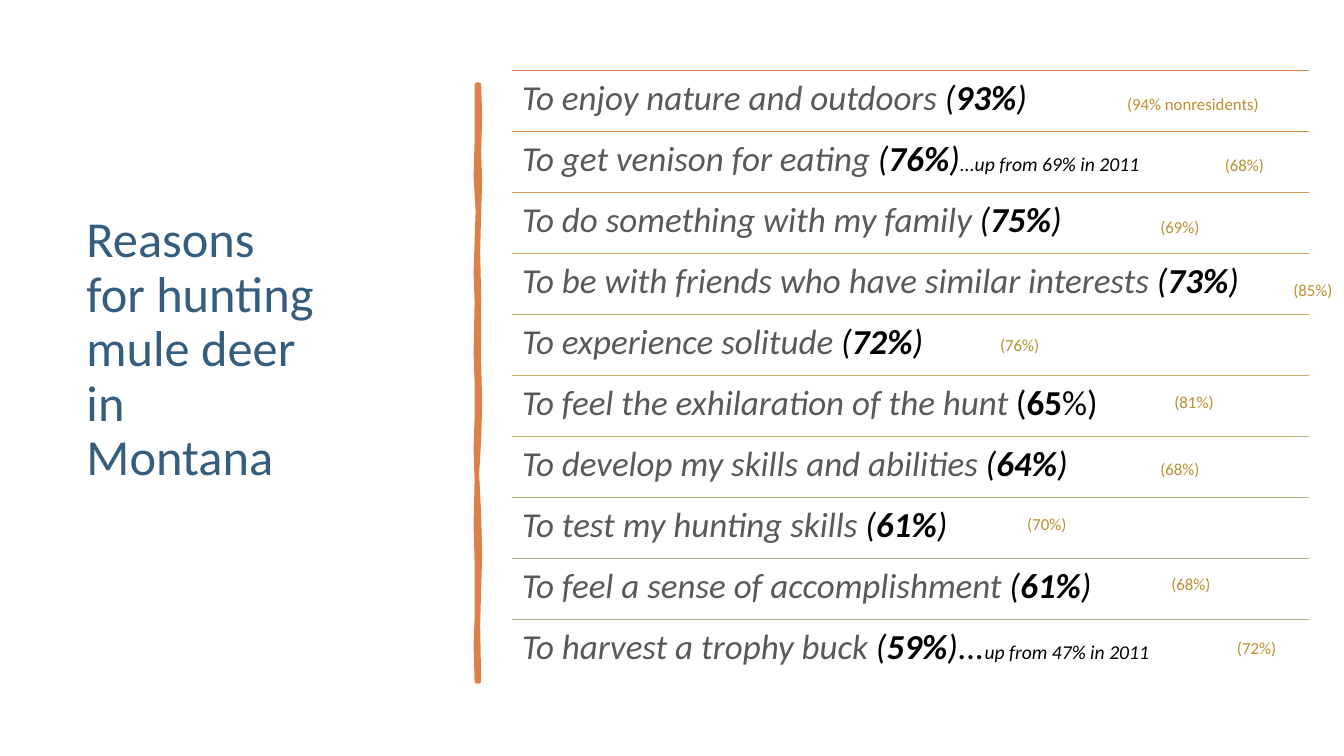
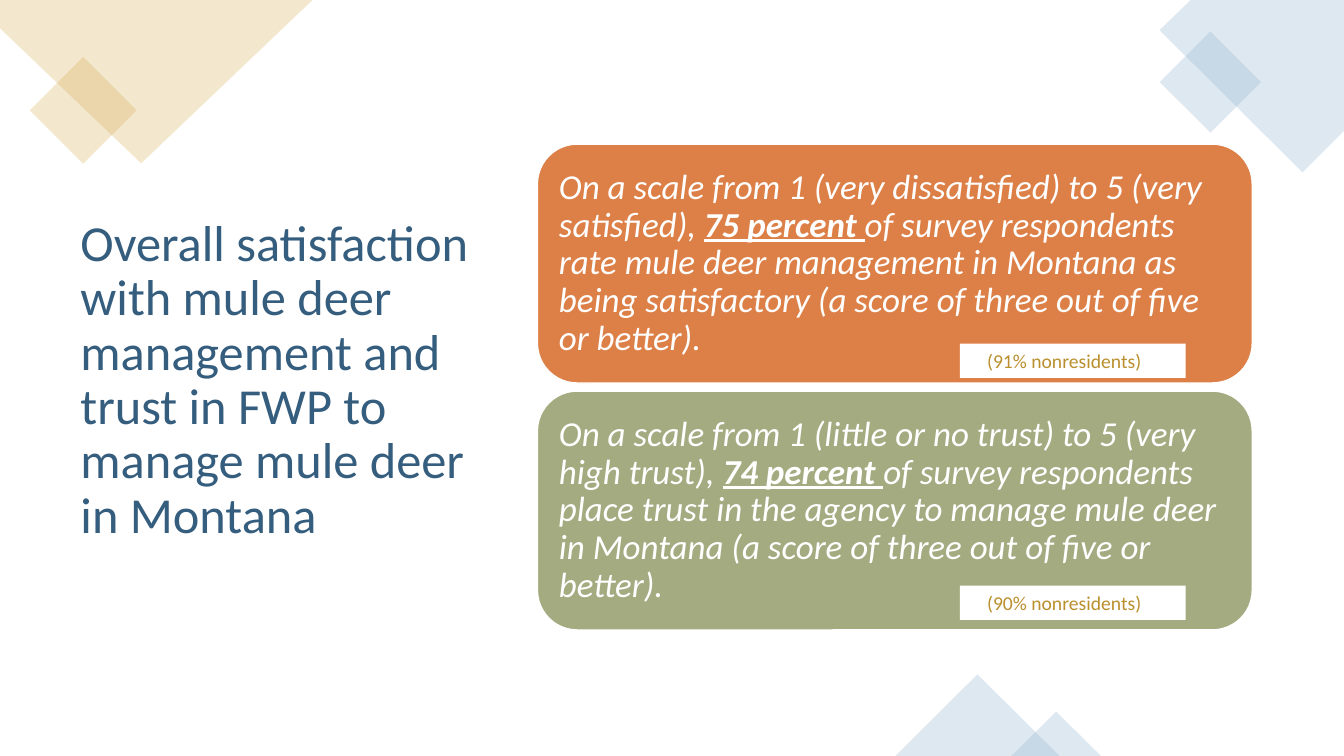
import collections

import lxml.etree
import pptx
import pptx.dml.color
import pptx.enum.shapes
import pptx.enum.text
import pptx.oxml.ns
import pptx.util

Inches = pptx.util.Inches
Pt = pptx.util.Pt
Shape = pptx.enum.shapes.MSO_SHAPE
Anchor = pptx.enum.text.MSO_ANCHOR
qn = pptx.oxml.ns.qn

NAVY, GOLD, GRAY = "355D7E", "BA8F2D", "595959"
ORANGE, GREEN, SAND, BLUE = "DD8047", "A5AB81", "D8B25C", "94B6D2"
BLACK, WHITE = "000000", "FFFFFF"

Reason = collections.namedtuple(
    "Reason",
    "text share close trend line note note_x note_y italic",
    defaults=[True],
)

REASONS = [
    Reason("To enjoy nature and outdoors ", "93%", ")", "", "DD8047",
           "(94% nonresidents)", 11.08, 0.88),
    Reason("To get venison for eating ", "76%", ")", "...up from 69% in 2011", "D78E4E",
           "(68%)", 12.05, 1.49),
    Reason("To do something with my family ", "75%", ")", "", "D29954",
           "(69%)", 11.41, 2.1),
    Reason("To be with friends who have similar interests ", "73%", ")", "", "CCA35B",
           "(85%)", 12.73, 2.73),
    Reason("To experience solitude ", "72%", ")", "", "C6AA61",
           "(76%)", 9.82, 3.27),
    Reason("To feel the exhilaration of the hunt ", "65", "%)", "", "C1AF68",
           "(81%)", 11.55, 3.84, False),
    Reason("To develop my skills and abilities ", "64%", ")", "", "BBB36E",
           "(68%)", 11.41, 4.5),
    Reason("To test my hunting skills ", "61%", ")", "", "B6B474",
           "(70%)", 10.09, 5.05),
    Reason("To feel a sense of accomplishment ", "61%", ")", "", "ADB07B",
           "(68%)", 11.52, 5.64),
    Reason("To harvest a trophy buck ", "59%", ")...", "up from 47% in 2011", "A5AB81",
           "(72%)", 12.17, 6.28),
]

BRUSH_RIGHT = [
    (4.75, 0.84), (4.76, 1.15), (4.75, 1.5), (4.76, 1.8), (4.75, 2.1), (4.74, 2.5),
    (4.75, 2.94), (4.75, 3.3), (4.75, 3.6), (4.76, 4), (4.75, 4.36), (4.73, 4.7),
    (4.75, 5.1), (4.76, 5.5), (4.75, 5.84), (4.74, 6.2), (4.75, 6.76),
]
BRUSH_LEFT = [
    (4.73, 6.76), (4.72, 6.4), (4.73, 6.13), (4.73, 5.8), (4.73, 5.57), (4.72, 5.2),
    (4.73, 4.77), (4.72, 4.45), (4.73, 4.15), (4.73, 3.8), (4.72, 3.5), (4.73, 3),
    (4.72, 2.7), (4.73, 2.4), (4.74, 2.1), (4.72, 1.75), (4.73, 1.4), (4.73, 0.84),
]

SCORES = [
    (1.43, 3.41, ORANGE,
     "On a scale from 1 (very dissatisfied) to 5 (very satisfied), ", "75 percent ",
     "of survey respondents rate mule deer management in Montana as being satisfactory "
     "(a score of three out of five or better).", "(91% nonresidents)"),
    (3.88, 5.81, GREEN,
     "On a scale from 1 (little or no trust) to 5 (very high trust), ", "74 percent ",
     "of survey respondents place trust in the agency to manage mule deer in Montana "
     "(a score of three out of five or better).", "(90% nonresidents)"),
]


def rgb(value):
    return pptx.dml.color.RGBColor.from_string(value)


class Deck:
    font = "Calibri"
    title_size, body_size, trend_size, note_size = 36, 25, 14, 12

    def __init__(self):
        self.prs = pptx.Presentation()
        self.prs.slide_width = Inches(13.33)
        self.prs.slide_height = Inches(7.5)
        self.s = None

    def new_slide(self):
        self.s = self.prs.slides.add_slide(self.prs.slide_layouts[6])

    def add_runs(self, sp, runs, anchor=Anchor.TOP, spacing=0.9):
        tf = sp.text_frame
        tf.word_wrap = True
        tf.vertical_anchor = anchor
        p = tf.paragraphs[0]
        p.alignment = pptx.enum.text.PP_ALIGN.LEFT
        p.line_spacing = spacing
        for text, size, color, marks in runs:
            r = p.add_run()
            r.text = text
            r.font.name = self.font
            r.font.size = Pt(size)
            r.font.color.rgb = rgb(color)
            r.font.bold = "b" in marks
            r.font.italic = "i" in marks
            r.font.underline = "u" in marks

    def text(self, x, y, w, h, runs, **options):
        sp = self.s.shapes.add_textbox(Inches(x), Inches(y), Inches(w), Inches(h))
        self.add_runs(sp, runs, **options)

    def title(self, x, y, w, h, text):
        self.text(x, y, w, h, [(text, self.title_size, NAVY, "")], anchor=Anchor.MIDDLE)

    def note(self, x, y, text):
        w = 0.6 if len(text) < 8 else 1.6
        self.text(x, y, w, 0.3, [(text, self.note_size, GOLD, "")], spacing=1)

    def paint(self, sp, fill, line=None, width=1, opacity=100):
        sp.shadow.inherit = False
        sp.fill.solid()
        sp.fill.fore_color.rgb = rgb(fill)
        if opacity < 100:
            color = sp.element.spPr.find(qn("a:solidFill")).find(qn("a:srgbClr"))
            lxml.etree.SubElement(color, qn("a:alpha")).set("val", str(opacity * 1000))
        if line:
            sp.line.color.rgb = rgb(line)
            sp.line.width = Pt(width)
        else:
            sp.line.fill.background()

    def shape(self, kind, x, y, w, h, fill, rotation=0, **paint):
        sp = self.s.shapes.add_shape(kind, Inches(x), Inches(y), Inches(w), Inches(h))
        sp.rotation = rotation
        self.paint(sp, fill, **paint)
        return sp

    def outline(self, points, fill, **paint):
        start, *rest = [(Inches(x), Inches(y)) for x, y in points]
        builder = self.s.shapes.build_freeform(*start)
        builder.add_line_segments(rest, close=True)
        self.paint(builder.convert_to_shape(), fill, **paint)

    def rule(self, x1, x2, y, color):
        line = self.s.shapes.add_connector(
            pptx.enum.shapes.MSO_CONNECTOR.STRAIGHT,
            Inches(x1), Inches(y), Inches(x2), Inches(y))
        line.line.color.rgb = rgb(color)
        line.line.width = Pt(1)
        lxml.etree.SubElement(line.element.spPr, qn("a:effectLst"))

    def badge(self, x, y, w, h, text):
        sp = self.shape(Shape.RECTANGLE, x, y, w, h, WHITE)
        sp.text_frame.margin_left = Inches(0.27)
        self.add_runs(sp, [(text, self.trend_size, GOLD, "")], spacing=1)


def reasons_slide(deck):
    deck.new_slide()
    deck.title(0.76, 0.42, 2.5, 6.11, "Reasons for hunting mule deer in Montana")
    deck.outline(BRUSH_RIGHT + BRUSH_LEFT, ORANGE, line=ORANGE, width=3.25)
    left, top, width, pitch = 5.08, 0.7, 7.9, 0.605
    for i, reason in enumerate(REASONS):
        y = top + i * pitch
        marks = "i" if reason.italic else ""
        runs = [
            (reason.text, deck.body_size, GRAY, "i"),
            ("(", deck.body_size, BLACK, marks),
            (reason.share, deck.body_size, BLACK, marks + "b"),
            (reason.close, deck.body_size, BLACK, marks),
        ]
        if reason.trend:
            runs.append((reason.trend, deck.trend_size, BLACK, marks))
        deck.rule(left, left + width, y, reason.line)
        deck.text(left, y + 0.05, width, pitch, runs)
        deck.note(reason.note_x, reason.note_y, reason.note)


def satisfaction_slide(deck):
    deck.new_slide()
    deck.title(0.7, 1.31, 4.33, 4.94,
               "Overall satisfaction with mule deer management and trust in FWP "
               "to manage mule deer in Montana")
    deck.shape(Shape.RECTANGLE, 0.45, 0.72, 0.75, 0.75, SAND, rotation=45, opacity=30)
    deck.outline([(0, 0), (3.1, 0), (1.4, 1.62), (0, 0.28)], SAND, opacity=30)
    deck.outline([(11.81, 0), (13.33, 0), (13.33, 1.3), (12.92, 1.71), (11.5, 0.3)],
                 BLUE, opacity=30)
    deck.shape(Shape.RECTANGLE, 11.65, 0.46, 0.71, 0.71, BLUE, rotation=45, opacity=30)
    for x, y, w, h in [(8.88, 6.69, 1.63, 0.81), (10.03, 7.06, 0.89, 0.44)]:
        deck.shape(Shape.ISOSCELES_TRIANGLE, x, y, w, h, BLUE, opacity=30)
    for y, badge_y, fill, scale, share, finding, nonresidents in SCORES:
        card = deck.shape(Shape.ROUNDED_RECTANGLE, 5.33, y, 7.09, 2.37, fill, line=WHITE)
        deck.add_runs(card, [
            (scale, deck.body_size, WHITE, "i"),
            (share, deck.body_size, WHITE, "ibu"),
            (finding, deck.body_size, WHITE, "i"),
        ], anchor=Anchor.MIDDLE)
        deck.badge(9.52, badge_y, 2.24, 0.34, nonresidents)


def main():
    deck = Deck()
    reasons_slide(deck)
    satisfaction_slide(deck)
    deck.prs.save("out.pptx")


if __name__ == "__main__":
    main()
